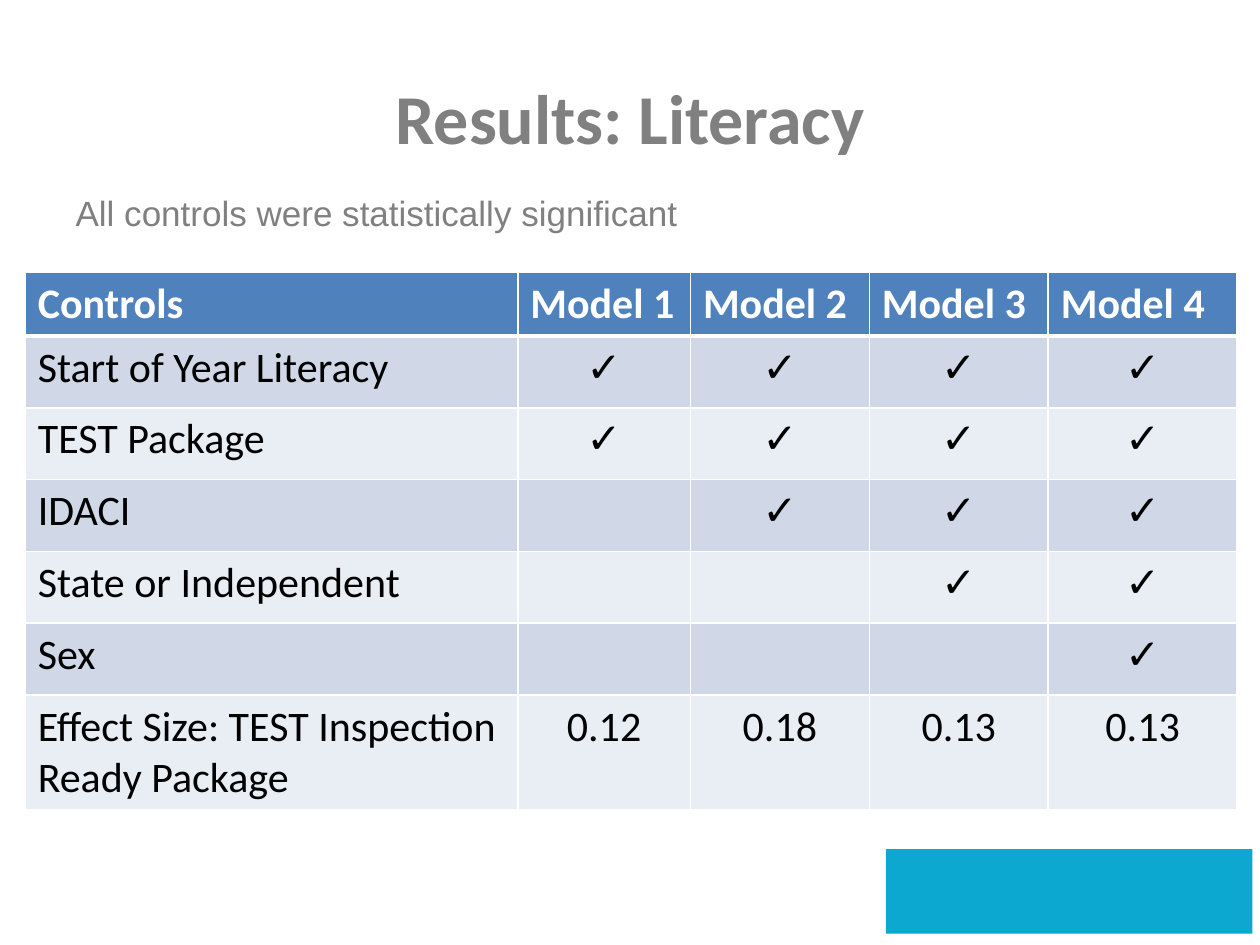
from dataclasses import dataclass

from lxml.etree import SubElement
from pptx import Presentation
from pptx.dml.color import RGBColor
from pptx.enum.shapes import MSO_SHAPE as Shape
from pptx.enum.text import MSO_ANCHOR as Anchor, PP_ALIGN as Align
from pptx.oxml.ns import qn
from pptx.util import Inches, Pt

COLORS = {
    "grey": "808080",
    "header": "4F81BD",
    "band_dark": "D0D8E8",
    "band_light": "E9EDF4",
    "white": "FFFFFF",
    "black": "000000",
    "accent": "0CA8D0",
}
COL_WIDTHS = [3.91, 1.37, 1.42, 1.42, 1.5]
ROW_HEIGHTS = [0.37] + [0.57] * 5 + [0.81]
BOLD_TICK_COLS = (1, 2)
TICK = "✓"


@dataclass
class Control:
    name: str
    first_model: int


CONTROLS = [
    Control("Start of Year Literacy", 1),
    Control("TEST Package", 1),
    Control("IDACI", 2),
    Control("State or Independent", 3),
    Control("Sex", 4),
]
EFFECT_SIZES = ["Effect Size: TEST Inspection Ready Package", "0.12", "0.18", "0.13", "0.13"]


@dataclass
class TextStyle:
    size: int
    font: str
    color: str
    bold: bool = False
    align: Align = Align.LEFT


def rgb(name: str) -> RGBColor:
    return RGBColor.from_string(COLORS[name])


def write(tf, text: str, style: TextStyle) -> None:
    p = tf.paragraphs[0]
    p.alignment = style.align
    p.space_before = Pt(0)
    r = p.add_run()
    r.text = text
    r.font.size = Pt(style.size)
    r.font.name = style.font
    r.font.bold = style.bold
    r.font.color.rgb = rgb(style.color)


def place(sp, left: float, top: float, width: float, height: float) -> None:
    sp.left, sp.top = Inches(left), Inches(top)
    sp.width, sp.height = Inches(width), Inches(height)


def add_border(cell, side: str, width: int) -> None:
    ln = SubElement(cell._tc.get_or_add_tcPr(), qn(f"a:ln{side}"), w=str(Pt(width)))
    fill = SubElement(ln, qn("a:solidFill"))
    SubElement(fill, qn("a:srgbClr"), val=COLORS["white"])


def format_cell(cell, row: int, col: int, text: str) -> None:
    widths = {"L": 1, "R": 1, "T": 3 if row == 1 else 1, "B": 3 if row == 0 else 1}
    for side, width in widths.items():
        add_border(cell, side, width)
    cell.fill.solid()
    band = "band_dark" if row % 2 else "band_light"
    cell.fill.fore_color.rgb = rgb("header" if row == 0 else band)
    if text:
        bold = row == 0 or (text == TICK and col in BOLD_TICK_COLS)
        align = Align.CENTER if row and col else Align.LEFT
        color = "black" if row else "white"
        write(cell.text_frame, text, TextStyle(24, "Calibri", color, bold, align))


def add_results_table(slide) -> None:
    models = range(1, len(COL_WIDTHS))
    rows = [["Controls"] + [f"Model {m}" for m in models]]
    rows += [[c.name] + [TICK if m >= c.first_model else "" for m in models] for c in CONTROLS]
    rows.append(EFFECT_SIZES)
    table = slide.shapes.add_table(
        len(rows), len(COL_WIDTHS), Inches(0.2), Inches(2.16),
        Inches(sum(COL_WIDTHS)), Inches(sum(ROW_HEIGHTS)),
    ).table
    for column, width in zip(table.columns, COL_WIDTHS):
        column.width = Inches(width)
    for i, (height, texts) in enumerate(zip(ROW_HEIGHTS, rows)):
        table.rows[i].height = Inches(height)
        for j, text in enumerate(texts):
            format_cell(table.cell(i, j), i, j, text)


def main() -> None:
    prs = Presentation()
    prs.slide_width, prs.slide_height = Inches(10), Inches(7.5)
    slide = prs.slides.add_slide(prs.slide_layouts[1])

    title = slide.shapes.title
    place(title, 0.5, 0.3, 9, 1.25)
    title.text_frame.vertical_anchor = Anchor.MIDDLE
    write(title.text_frame, "Results: Literacy",
          TextStyle(40, "Calibri", "grey", True, Align.CENTER))

    body = slide.placeholders[1]
    place(body, 0.5, 1.47, 9, 4.95)
    pPr = body.text_frame.paragraphs[0]._p.get_or_add_pPr()
    pPr.set("marL", "0")
    pPr.set("indent", "0")
    SubElement(pPr, qn("a:buNone"))
    write(body.text_frame, "All controls were statistically significant",
          TextStyle(20, "Arial", "grey"))

    add_results_table(slide)

    sp = slide.shapes.add_shape(
        Shape.RECTANGLE, Inches(7.03), Inches(6.74), Inches(2.91), Inches(0.67))
    sp.shadow.inherit = False
    sp.fill.solid()
    sp.fill.fore_color.rgb = rgb("accent")
    sp.line.fill.background()

    prs.save("out.pptx")


if __name__ == "__main__":
    main()
